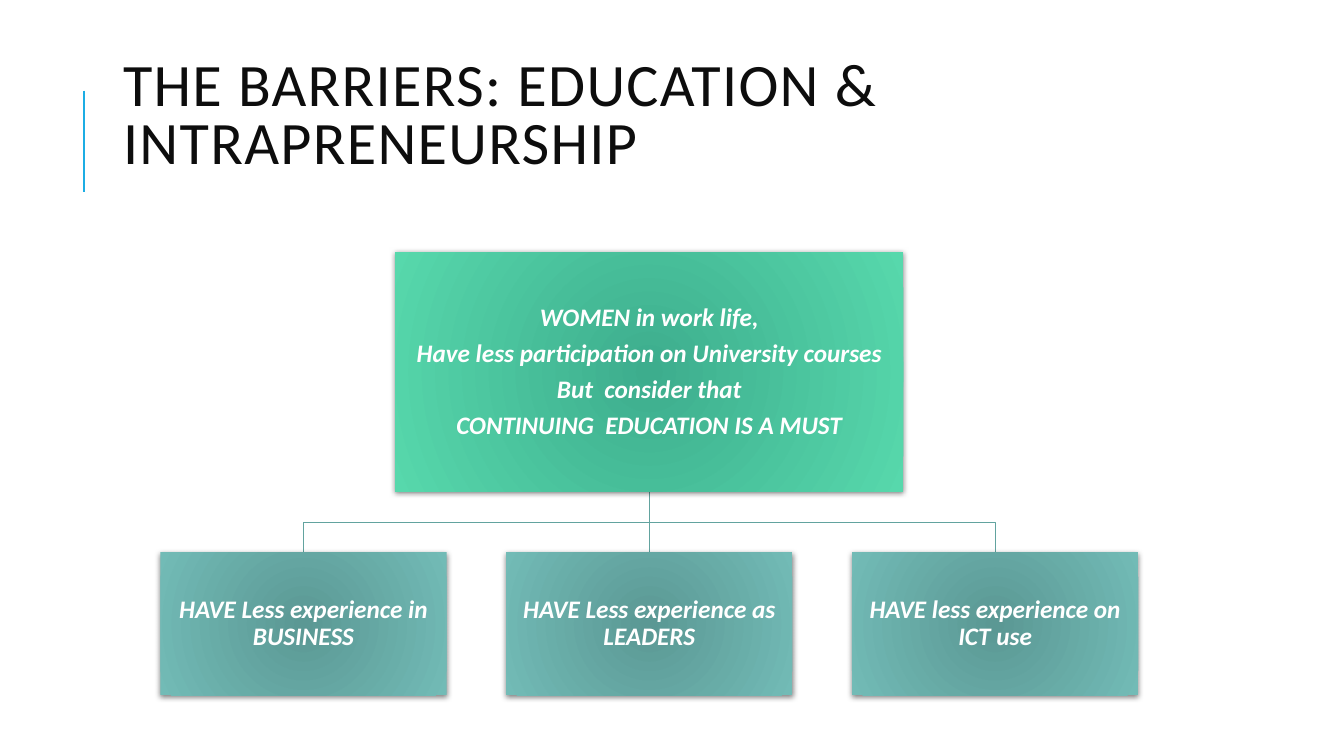
from dataclasses import dataclass

from pptx import Presentation
from pptx.dml.color import RGBColor as RGB
from pptx.enum.shapes import MSO_CONNECTOR as CONN, MSO_SHAPE as SHAPE
from pptx.enum.text import MSO_ANCHOR as ANCHOR, MSO_AUTO_SIZE as FIT, PP_ALIGN as ALIGN
from pptx.oxml import parse_xml
from pptx.oxml.ns import nsdecls, qn
from pptx.util import Inches, Pt

FONT = "Calibri"
COLORS = {
    "title": "0D0D0D", "accent": "1CADE4", "link": "62A39F", "white": "FFFFFF",
    "root_in": "3DAD8D", "root_out": "57D8AC",
    "leaf_in": "5B9894", "leaf_out": "72BBB6",
}
CENTER_X, LEAF_PITCH = 6.44, 3.43
ROOT_BOTTOM, LEAF_TOP = 4.88, 5.48


@dataclass
class Box:
    text: str
    center: float
    top: float
    width: float
    height: float
    style: str


def color(name: str) -> RGB:
    return RGB.from_string(COLORS[name])


def write(tf, text: str, *, size: float, fill: str, bold=False, italic=False,
          align=ALIGN.LEFT, spacing=0.9, after=0.0, tracking=0) -> None:
    """Fill a text frame, one paragraph for each line of text."""
    tf.word_wrap = True
    tf.auto_size = FIT.NONE
    tf.vertical_anchor = ANCHOR.MIDDLE
    for i, line in enumerate(text.split("\n")):
        p = tf.add_paragraph() if i else tf.paragraphs[0]
        p.alignment, p.line_spacing = align, spacing
        p.space_before, p.space_after = Pt(0), Pt(after)
        r = p.add_run()
        r.text = line
        r.font.name, r.font.size = FONT, Pt(size)
        r.font.bold, r.font.italic = bold, italic
        r.font.color.rgb = color(fill)
        if tracking:
            r.font._element.set("spc", str(tracking))


def add_box(shapes, box: Box) -> None:
    sp = shapes.add_shape(SHAPE.RECTANGLE, Inches(box.center - box.width / 2),
                          Inches(box.top), Inches(box.width), Inches(box.height))
    sp.line.fill.background()

    # Radial gradient, dark in the middle
    sp.fill.gradient()
    for stop, part in zip(sp.fill.gradient_stops, ("in", "out")):
        stop.color.rgb = color(f"{box.style}_{part}")
    spPr = sp._element.spPr
    lin = spPr.find(".//" + qn("a:lin"))
    lin.getparent().replace(lin, parse_xml(
        f'<a:path {nsdecls("a")} path="circle">'
        '<a:fillToRect l="100000" t="100000" r="100000" b="100000"/></a:path>'))

    # Soft shadow below
    sp.shadow.inherit = False
    spPr.find(qn("a:effectLst")).append(parse_xml(
        f'<a:outerShdw {nsdecls("a")} blurRad="{Pt(4)}" dist="{Pt(1)}" '
        'dir="5400000" rotWithShape="0"><a:srgbClr val="000000">'
        '<a:alpha val="50000"/></a:srgbClr></a:outerShdw>'))

    tf = sp.text_frame
    tf.margin_left = tf.margin_right = tf.margin_top = tf.margin_bottom = Inches(0.01)
    write(tf, box.text, size=18, fill="white", bold=True, italic=True,
          align=ALIGN.CENTER, after=6.3)


def add_line(shapes, x: float, top: float, bottom: float, fill: str, width: float) -> None:
    """Draw a vertical line."""
    cx = shapes.add_connector(CONN.STRAIGHT, Inches(x), Inches(top),
                              Inches(x), Inches(bottom))
    cx.line.color.rgb, cx.line.width = color(fill), Pt(width)
    cx._element.spPr.append(parse_xml(f'<a:effectLst {nsdecls("a")}/>'))


def add_link(shapes, x: float) -> None:
    """Join the root box to the leaf box centred at x."""
    if x == CENTER_X:
        add_line(shapes, x, ROOT_BOTTOM, LEAF_TOP, "link", 0.75)
        return
    mid = (ROOT_BOTTOM + LEAF_TOP) / 2
    bends = [(CENTER_X, mid), (x, mid), (x, LEAF_TOP)]
    path = shapes.build_freeform(Inches(CENTER_X), Inches(ROOT_BOTTOM))
    path.add_line_segments([(Inches(a), Inches(b)) for a, b in bends], close=False)
    sp = path.convert_to_shape()
    sp.fill.background()
    sp.line.color.rgb, sp.line.width = color("link"), Pt(0.75)
    sp.shadow.inherit = False


def main() -> None:
    prs = Presentation()
    prs.slide_width, prs.slide_height = Inches(13.33), Inches(7.5)
    s = prs.slides.add_slide(prs.slide_layouts[5])

    # Title and its accent line
    title = s.shapes.title
    title.left, title.top = Inches(1.12), Inches(0.64)
    title.width, title.height = Inches(10.63), Inches(1.64)
    title.text_frame.margin_bottom = Inches(0.62)
    write(title.text_frame, "THE BARRIERS: EDUCATION & INTRAPRENEURSHIP",
          size=43, fill="title", spacing=0.8, tracking=100)
    add_line(s.shapes, 0.83, 0.9, 1.9, "accent", 1.5)

    # Hierarchy: one root, three evenly spaced leaves
    root = Box("WOMEN in work life,\nHave less participation on University courses\n"
               "But  consider that\nCONTINUING  EDUCATION IS A MUST",
               CENTER_X, 2.5, 5.04, 2.38, "root")
    texts = ["HAVE Less experience in BUSINESS", "HAVE Less experience as LEADERS",
             "HAVE less experience on ICT use"]
    leaves = [Box(text, CENTER_X + i * LEAF_PITCH, LEAF_TOP, 2.84, 1.42, "leaf")
              for i, text in enumerate(texts, start=-1)]
    for leaf in leaves:
        add_link(s.shapes, leaf.center)
    for box in [root, *leaves]:
        add_box(s.shapes, box)

    prs.save("out.pptx")


if __name__ == "__main__":
    main()
